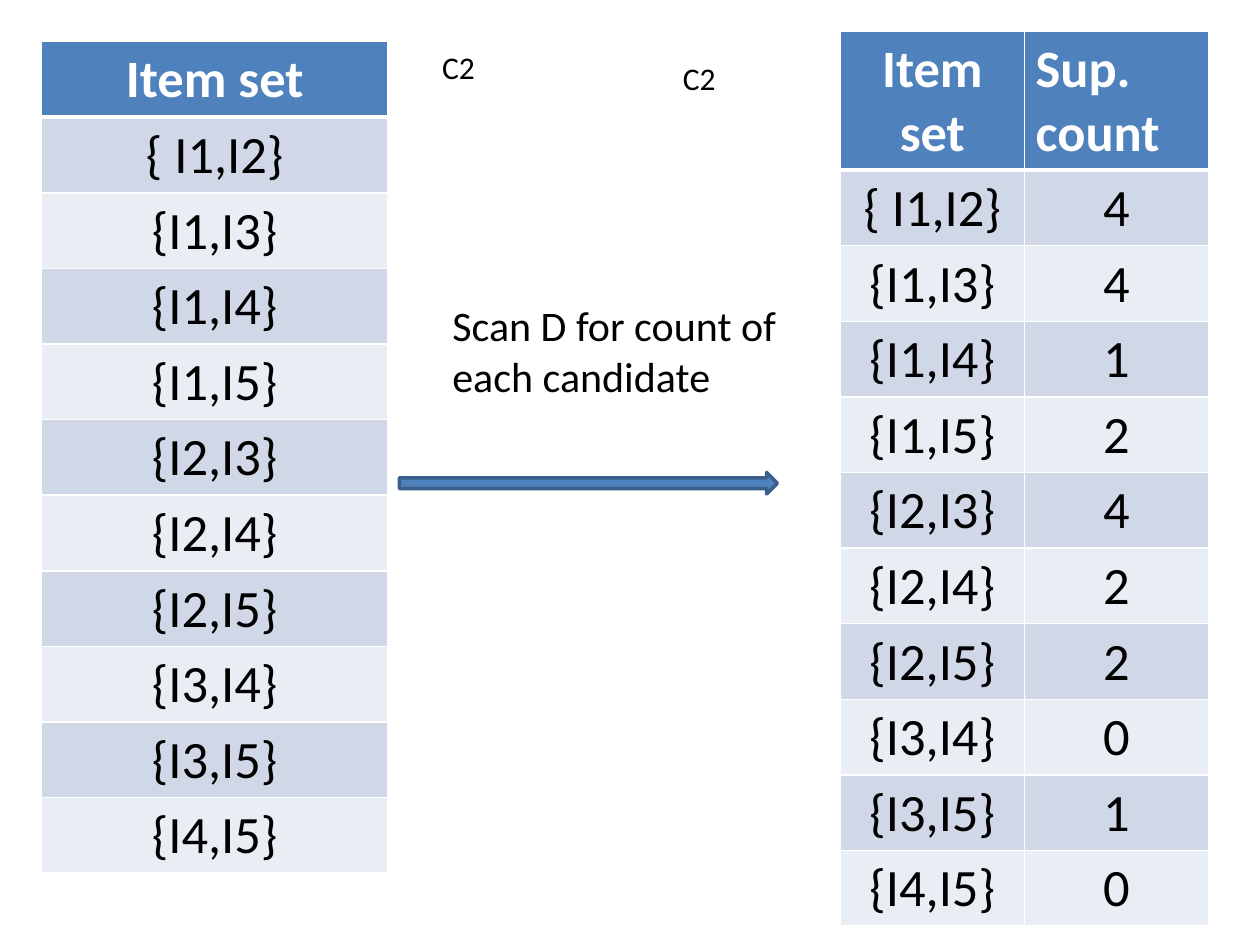
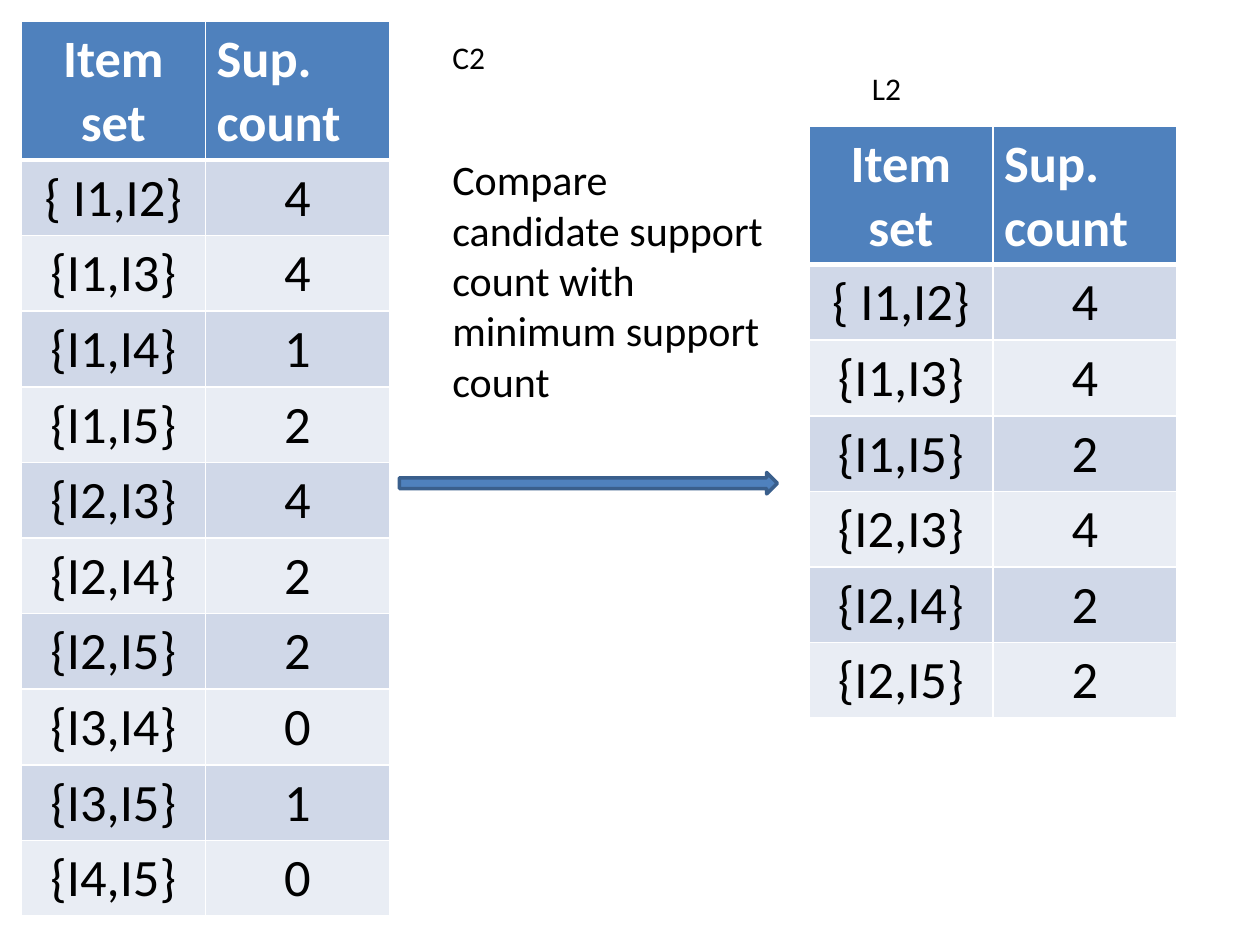
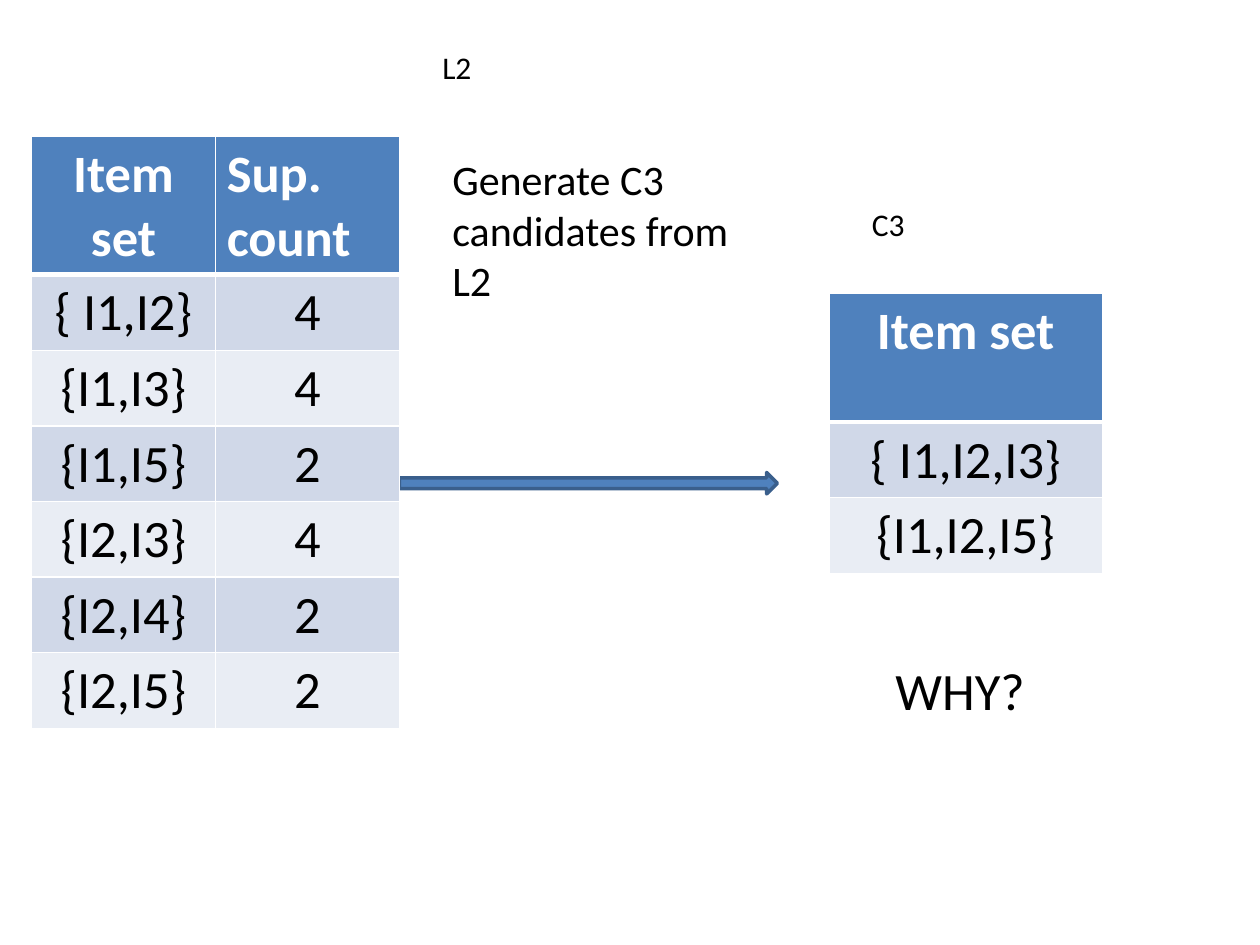
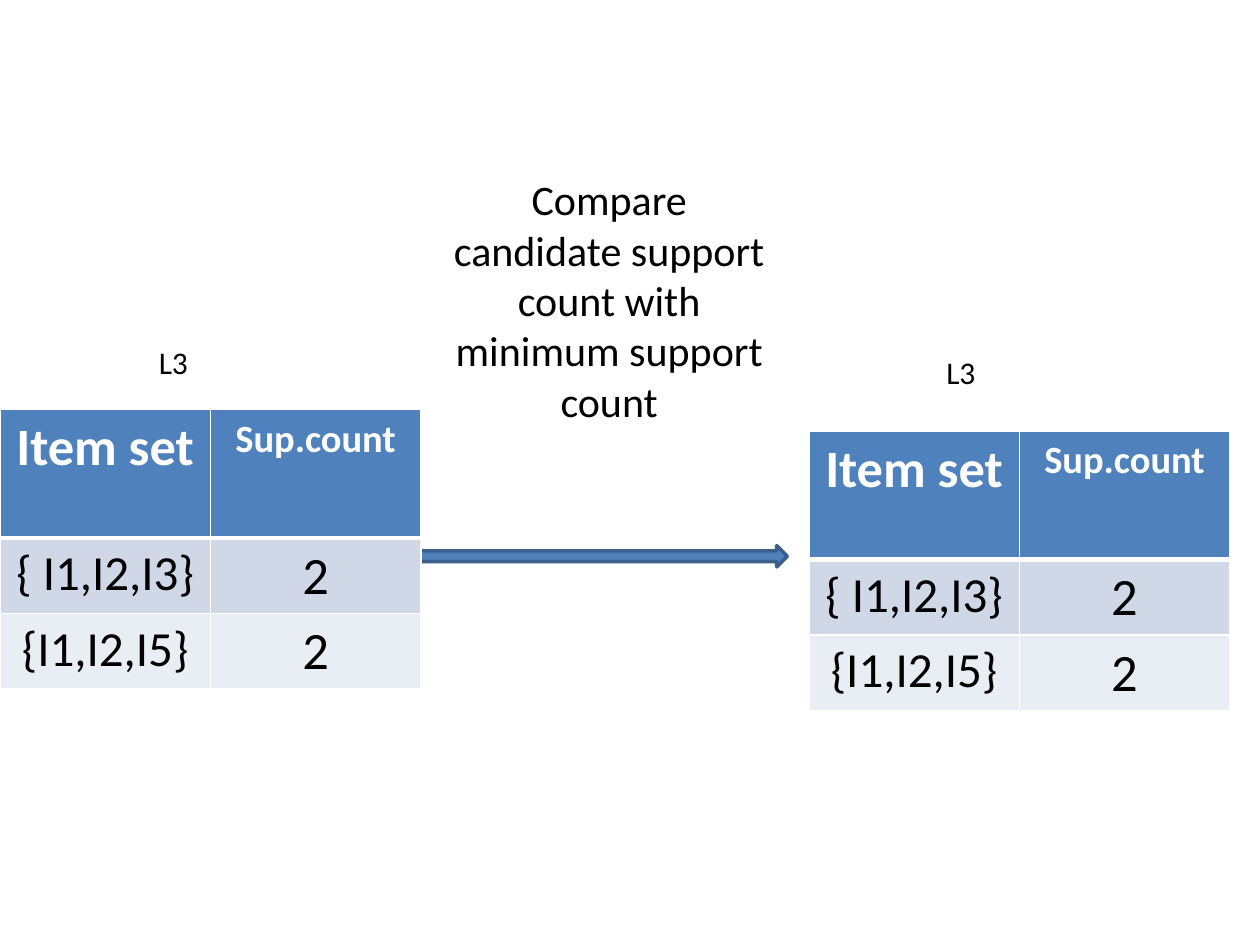
from dataclasses import dataclass

from lxml import etree
from pptx import Presentation
from pptx.dml.color import RGBColor
from pptx.enum.shapes import MSO_SHAPE
from pptx.enum.text import MSO_AUTO_SIZE, PP_ALIGN
from pptx.oxml.ns import qn
from pptx.util import Inches, Pt

LEFT, CENTER = PP_ALIGN.LEFT, PP_ALIGN.CENTER
RIGHT_ARROW = MSO_SHAPE.RIGHT_ARROW
GROW = MSO_AUTO_SIZE.SHAPE_TO_FIT_TEXT

FONT = "Calibri"
BLUE = RGBColor(0x4F, 0x81, 0xBD)
DARK_BLUE = RGBColor(0x3A, 0x5F, 0x8C)
BAND_DARK = RGBColor(0xD0, 0xD8, 0xE8)
BAND_LIGHT = RGBColor(0xE9, 0xED, 0xF4)
WHITE = RGBColor(0xFF, 0xFF, 0xFF)
BLACK = RGBColor(0x00, 0x00, 0x00)

ROW_HEIGHT = 0.6
WRAPPED_HEADER = 1.1
TALL_HEADER = 1.02
MARGIN_SIDE, MARGIN_TOP, MARGIN_BOTTOM = Inches(0.09), Inches(0.05), Inches(0.04)
THIN_RULE, HEADER_RULE = Pt(1), Pt(3)
TABLE_SIZE, CAPTION_SIZE, LABEL_SIZE = 30, 24, 18

MINIMUM_SUPPORT = 2
PAIR_COUNTS = {
    "{ I1,I2}": 4, "{I1,I3}": 4, "{I1,I4}": 1, "{I1,I5}": 2, "{I2,I3}": 4,
    "{I2,I4}": 2, "{I2,I5}": 2, "{I3,I4}": 0, "{I3,I5}": 1, "{I4,I5}": 0,
}
TRIPLE_COUNTS = {"{ I1,I2,I3}": 2, "{I1,I2,I5}": 2}


@dataclass(frozen=True)
class Column:
    header: str
    width: float
    header_size: int = TABLE_SIZE
    body_size: int = TABLE_SIZE
    header_alignment: PP_ALIGN = CENTER


@dataclass(frozen=True)
class ItemTable:
    left: float
    top: float
    columns: tuple[Column, ...]
    rows: list[tuple]
    header_height: float


@dataclass(frozen=True)
class Text:
    text: str
    left: float
    top: float
    width: float
    height: float = 0.4
    size: int = LABEL_SIZE
    alignment: PP_ALIGN = LEFT


@dataclass(frozen=True)
class Step:
    """One slide: an arrow with its caption, the tables and their labels."""
    caption: Text
    tables: tuple[ItemTable, ...]
    labels: tuple[Text, ...]
    arrow_left: float = 3.17
    arrow_top: float = 3.75


PAIR_COLUMNS = (
    Column("Item set", 1.46),
    Column("Sup. count", 1.46, header_alignment=LEFT),
)
TRIPLE_COLUMNS = (
    Column("Item set", 1.67, body_size=28),
    Column("Sup.count", 1.67, header_size=22),
)


def candidate_pairs(left: float, top: float) -> ItemTable:
    return ItemTable(left, top, PAIR_COLUMNS, list(PAIR_COUNTS.items()), WRAPPED_HEADER)


def frequent_pairs(left: float, top: float) -> ItemTable:
    rows = [pair for pair in PAIR_COUNTS.items() if pair[1] >= MINIMUM_SUPPORT]
    return ItemTable(left, top, PAIR_COLUMNS, rows, WRAPPED_HEADER)


def counted_triples(left: float, top: float) -> ItemTable:
    return ItemTable(left, top, TRIPLE_COLUMNS, list(TRIPLE_COUNTS.items()), TALL_HEADER)


def item_sets(left: float, top: float, width: float, counts: dict[str, int],
              header_height: float) -> ItemTable:
    """A table of the item sets alone, without counts."""
    rows = [(item_set,) for item_set in counts]
    return ItemTable(left, top, (Column("Item set", width),), rows, header_height)


COMPARE = "Compare candidate support count with minimum support count"

STEPS = (
    Step(
        Text("Scan D for count of each candidate", 3.5, 2.33, 2.75, 0.91, CAPTION_SIZE),
        (item_sets(0.33, 0.33, 2.75, PAIR_COUNTS, ROW_HEIGHT), candidate_pairs(6.67, 0.25)),
        (Text("C2", 3.42, 0.33, 1.17), Text("C2", 5.33, 0.42, 1.17)),
    ),
    Step(
        Text(COMPARE, 3.5, 1.17, 2.67, 2.12, CAPTION_SIZE),
        (candidate_pairs(0.17, 0.17), frequent_pairs(6.42, 1)),
        (Text("C2", 3.5, 0.25, 1.08), Text("L2", 6.83, 0.5, 1.08)),
    ),
    Step(
        Text("Generate C3 candidates from L2", 3.5, 1.17, 2.67, 1.31, CAPTION_SIZE),
        (frequent_pairs(0.25, 1.08), item_sets(6.58, 2.33, 2.17, TRIPLE_COUNTS, TALL_HEADER)),
        (
            Text("WHY?", 6.08, 5.17, 3.08, 0.61, TABLE_SIZE, CENTER),
            Text("L2", 3.42, 0.33, 1.58),
            Text("C3", 6.83, 1.58, 1.58),
        ),
    ),
    Step(
        Text(COMPARE, 3.5, 1.33, 2.67, 2.12, CAPTION_SIZE, CENTER),
        (counted_triples(0, 3.25), counted_triples(6.42, 3.42)),
        (Text("L3", 7.42, 2.75, 0.92), Text("L3", 1.17, 2.67, 0.92)),
        arrow_left=3.25,
        arrow_top=4.33,
    ),
)


def write(target, text: str, size: int, color: RGBColor, alignment: PP_ALIGN,
          bold: bool = False) -> None:
    """Fill a text frame or cell margin owner with one styled paragraph."""
    paragraph = target.paragraphs[0]
    paragraph.text = text
    paragraph.alignment = alignment
    font = paragraph.font
    font.name, font.size, font.bold = FONT, Pt(size), bold
    font.color.rgb = color


def set_margins(target) -> None:
    target.margin_left = target.margin_right = MARGIN_SIDE
    target.margin_top, target.margin_bottom = MARGIN_TOP, MARGIN_BOTTOM


def add_text(slide, text: Text) -> None:
    box = slide.shapes.add_textbox(
        Inches(text.left), Inches(text.top), Inches(text.width), Inches(text.height))
    frame = box.text_frame
    frame.word_wrap = True
    frame.auto_size = GROW
    set_margins(frame)
    write(frame, text.text, text.size, BLACK, text.alignment)


def add_arrow(slide, left: float, top: float) -> None:
    arrow = slide.shapes.add_shape(
        RIGHT_ARROW, Inches(left), Inches(top), Inches(3), Inches(0.17))
    arrow.shadow.inherit = False
    arrow.fill.solid()
    arrow.fill.fore_color.rgb = BLUE
    arrow.line.color.rgb = DARK_BLUE
    arrow.line.width = Pt(2)


def set_borders(cell, top: int, bottom: int) -> None:
    """Draw white rules; call before filling, as fills follow borders in the XML."""
    properties = cell._tc.get_or_add_tcPr()
    widths = {"a:lnL": THIN_RULE, "a:lnR": THIN_RULE, "a:lnT": top, "a:lnB": bottom}
    for tag, width in widths.items():
        line = etree.SubElement(properties, qn(tag), w=str(width))
        fill = etree.SubElement(line, qn("a:solidFill"))
        etree.SubElement(fill, qn("a:srgbClr"), val=str(WHITE))


def add_item_table(slide, spec: ItemTable) -> None:
    row_count = len(spec.rows) + 1
    width = sum(column.width for column in spec.columns)
    height = spec.header_height + ROW_HEIGHT * len(spec.rows)
    table = slide.shapes.add_table(
        row_count, len(spec.columns),
        Inches(spec.left), Inches(spec.top), Inches(width), Inches(height)).table
    for row_index in range(row_count):
        is_header = row_index == 0
        table.rows[row_index].height = Inches(spec.header_height if is_header else ROW_HEIGHT)
        band = BLUE if is_header else BAND_DARK if row_index % 2 else BAND_LIGHT
        for column_index, column in enumerate(spec.columns):
            table.columns[column_index].width = Inches(column.width)
            cell = table.cell(row_index, column_index)
            set_margins(cell)
            set_borders(cell,
                        top=HEADER_RULE if row_index == 1 else THIN_RULE,
                        bottom=HEADER_RULE if is_header else THIN_RULE)
            cell.fill.solid()
            cell.fill.fore_color.rgb = band
            if is_header:
                write(cell.text_frame, column.header, column.header_size, WHITE,
                      column.header_alignment, bold=True)
            else:
                value = spec.rows[row_index - 1][column_index]
                write(cell.text_frame, str(value), column.body_size, BLACK, CENTER)


def add_step(presentation, step: Step) -> None:
    slide = presentation.slides.add_slide(presentation.slide_layouts[6])
    add_arrow(slide, step.arrow_left, step.arrow_top)
    add_text(slide, step.caption)
    for table in step.tables:
        add_item_table(slide, table)
    for label in step.labels:
        add_text(slide, label)


def main() -> None:
    presentation = Presentation()
    presentation.slide_width, presentation.slide_height = Inches(10), Inches(7.5)
    for step in STEPS:
        add_step(presentation, step)
    presentation.save("out.pptx")


if __name__ == "__main__":
    main()
